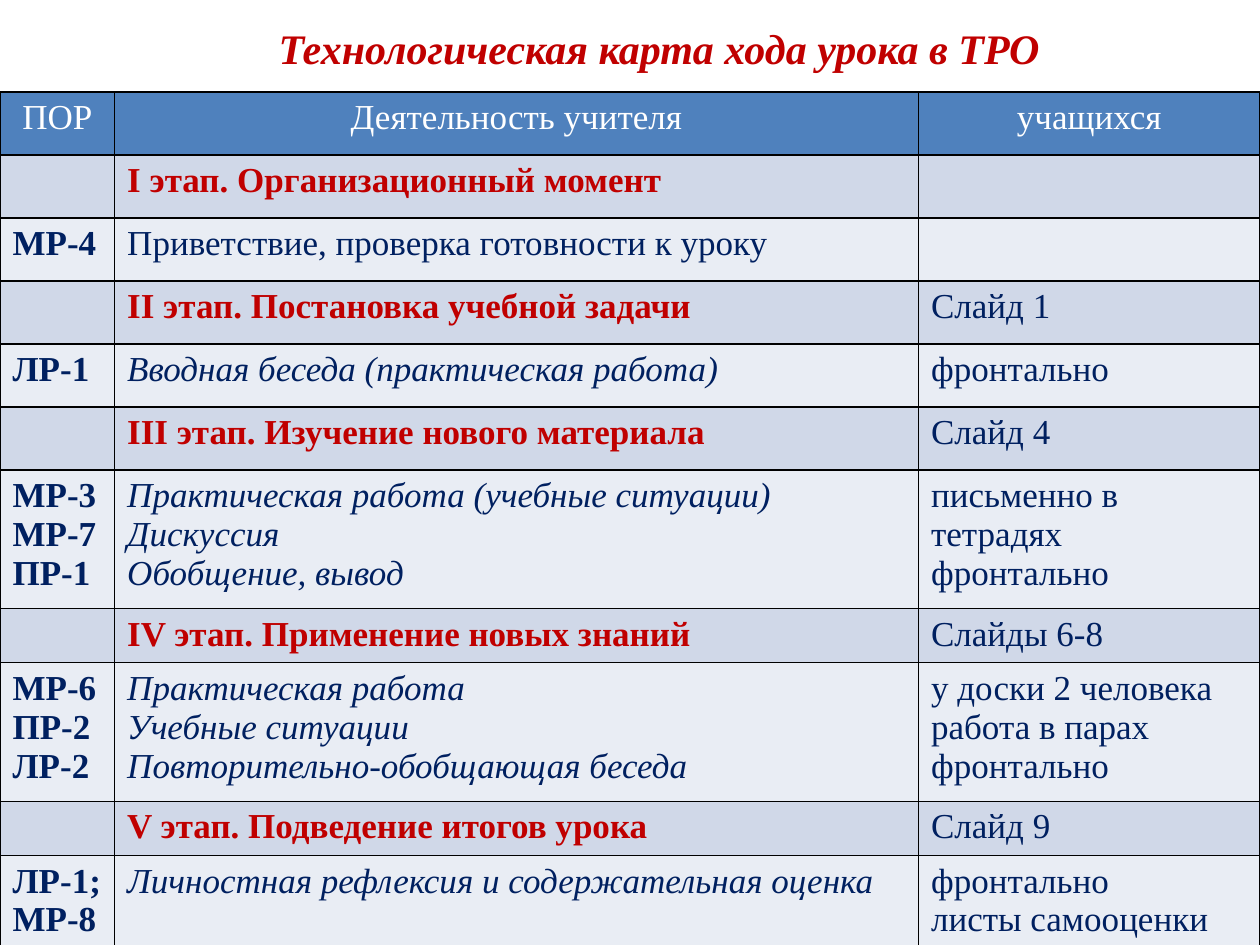
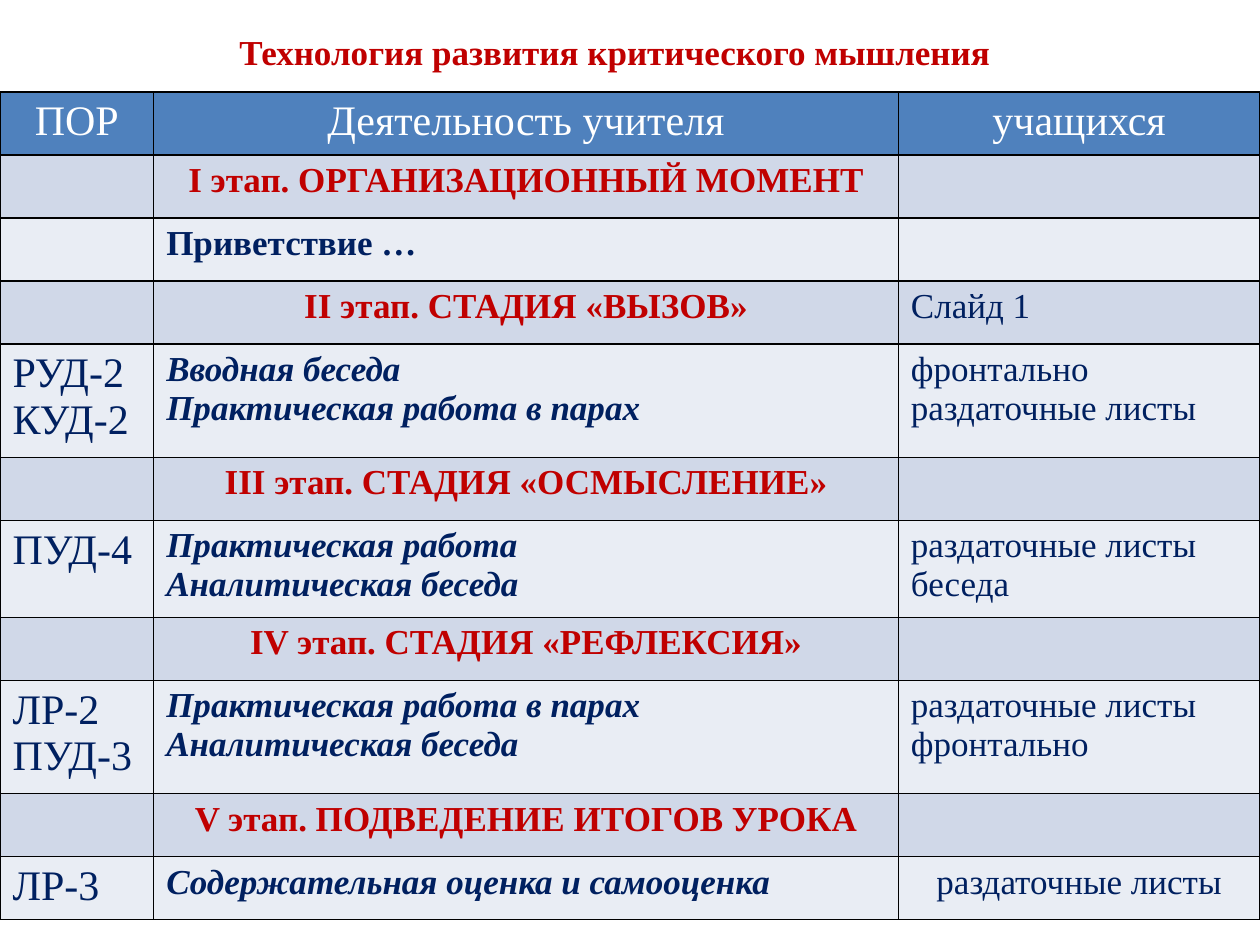
import pptx
import pptx.dml.color
import pptx.enum.text
import pptx.oxml
import pptx.oxml.ns
import pptx.util
from dataclasses import dataclass

Inches = pptx.util.Inches
Align = pptx.enum.text.PP_ALIGN


@dataclass(frozen=True)
class Theme:
    font: str = "Times New Roman"
    header: str = "4F81BD"
    stage: str = "D0D8E8"
    step: str = "E9EDF4"
    red: str = "C00000"
    navy: str = "002060"
    white: str = "FFFFFF"
    border: str = "000000"
    border_width: int = 12700
    regular: int = 20
    large: int = 24


theme = Theme()


def write_text(text_frame, text, size=theme.regular, color=theme.navy, bold=False, italic=False, align=Align.LEFT):
    for index, line in enumerate(text.split("\n")):
        paragraph = text_frame.paragraphs[0] if index == 0 else text_frame.add_paragraph()
        paragraph.alignment = align
        run = paragraph.add_run()
        run.text = line
        run.font.name = theme.font
        run.font.size = pptx.util.Pt(size)
        run.font.bold = bold
        run.font.italic = italic
        run.font.color.rgb = pptx.dml.color.RGBColor.from_string(color)


def paint_cell(cell, color):
    properties = cell._tc.get_or_add_tcPr()
    for side in ("lnL", "lnR", "lnT", "lnB"):
        properties.append(pptx.oxml.parse_xml(
            f'<a:{side} {pptx.oxml.ns.nsdecls("a")} w="{theme.border_width}"><a:solidFill>'
            f'<a:srgbClr val="{theme.border}"/></a:solidFill></a:{side}>'))
    cell.fill.solid()
    cell.fill.fore_color.rgb = pptx.dml.color.RGBColor.from_string(color)


header_row = ("ПОР", "Деятельность учителя", "учащихся")

lesson_plans = [
    {
        "title": "Технологическая карта хода урока в ТРО",
        "title_box": (1.53, 0.13, 7.4, 0.51),
        "title_format": {"size": theme.large, "italic": True},
        "columns": (0.91, 6.38, 2.71),
        "heights": (0.5, 0.5, 0.5, 0.5, 0.5, 0.5, 1.1, 0.43, 1.1, 0.43, 0.9),
        "header_size": theme.regular,
        "stage_align": Align.LEFT,
        "code_format": {"bold": True},
        "activity_bold": False,
        "last_align": Align.LEFT,
        "rows": [
            ("", "I этап. Организационный момент", ""),
            ("МР-4", "Приветствие, проверка готовности к уроку", ""),
            ("", "II этап. Постановка учебной задачи", "Слайд 1"),
            ("ЛР-1", "Вводная беседа (практическая работа)", "фронтально"),
            ("", "III этап. Изучение нового материала", "Слайд 4"),
            ("МР-3\nМР-7\nПР-1",
             "Практическая работа (учебные ситуации)\nДискуссия\nОбобщение, вывод",
             "письменно в тетрадях\nфронтально"),
            ("", "IV этап. Применение новых знаний", "Слайды 6-8"),
            ("МР-6\nПР-2\nЛР-2",
             "Практическая работа\nУчебные ситуации\nПовторительно-обобщающая беседа",
             "у доски 2 человека\nработа в парах\nфронтально"),
            ("", "V этап. Подведение итогов урока", "Слайд 9"),
            ("ЛР-1; МР-8", "Личностная рефлексия и содержательная оценка",
             "фронтально\nлисты самооценки"),
        ],
    },
    {
        "title": "Технология развития критического мышления",
        "title_box": (1.22, 0.19, 7.32, 0.44),
        "title_format": {"size": theme.regular},
        "columns": (1.22, 5.91, 2.87),
        "heights": (0.5, 0.5, 0.5, 0.5, 0.9, 0.5, 0.77, 0.5, 0.9, 0.5, 0.5),
        "header_size": theme.large,
        "stage_align": Align.CENTER,
        "code_format": {"size": theme.large},
        "activity_bold": True,
        "last_align": Align.CENTER,
        "rows": [
            ("", "I этап. ОРГАНИЗАЦИОННЫЙ МОМЕНТ", ""),
            ("", "Приветствие …", ""),
            ("", "II этап. СТАДИЯ «ВЫЗОВ»", "Слайд 1"),
            ("РУД-2\nКУД-2", "Вводная беседа\nПрактическая работа в парах",
             "фронтально\nраздаточные листы"),
            ("", "III этап. СТАДИЯ «ОСМЫСЛЕНИЕ»", ""),
            ("ПУД-4", "Практическая работа\nАналитическая беседа",
             "раздаточные листы\nбеседа"),
            ("", "IV этап. СТАДИЯ «РЕФЛЕКСИЯ»", ""),
            ("ЛР-2\nПУД-3", "Практическая работа в парах\nАналитическая беседа",
             "раздаточные листы\nфронтально"),
            ("", "V этап. ПОДВЕДЕНИЕ ИТОГОВ УРОКА", ""),
            ("ЛР-3", "Содержательная оценка и самооценка", "раздаточные листы"),
        ],
    },
]

presentation = pptx.Presentation()
presentation.slide_width = Inches(10)
presentation.slide_height = Inches(7.5)
title_only_layout = presentation.slide_layouts[5]

for plan in lesson_plans:
    slide = presentation.slides.add_slide(title_only_layout)
    title = slide.shapes.title
    title.left, title.top, title.width, title.height = map(Inches, plan["title_box"])
    title.text_frame.auto_size = pptx.enum.text.MSO_AUTO_SIZE.NONE
    title.text_frame.word_wrap = True
    title.text_frame.vertical_anchor = pptx.enum.text.MSO_ANCHOR.TOP
    write_text(title.text_frame, plan["title"], color=theme.red, bold=True,
               align=Align.CENTER, **plan["title_format"])

    rows = [header_row] + plan["rows"]
    table = slide.shapes.add_table(len(rows), len(header_row), Inches(0), Inches(0.73),
                                   Inches(10), Inches(sum(plan["heights"]))).table
    for column, width in zip(table.columns, plan["columns"]):
        column.width = Inches(width)

    for row_index, (row, height) in enumerate(zip(rows, plan["heights"])):
        table.rows[row_index].height = Inches(height)
        is_header = row_index == 0
        is_stage = row_index % 2 == 1
        fill = theme.header if is_header else theme.stage if is_stage else theme.step
        for column_index, text in enumerate(row):
            cell = table.cell(row_index, column_index)
            paint_cell(cell, fill)
            if not text:
                continue
            if is_header:
                text_format = {"size": plan["header_size"], "color": theme.white, "align": Align.CENTER}
            elif column_index == 0:
                text_format = plan["code_format"]
            elif column_index == 2:
                is_last = row_index == len(rows) - 1
                text_format = {"align": plan["last_align"] if is_last else Align.LEFT}
            elif is_stage:
                text_format = {"color": theme.red, "bold": True, "align": plan["stage_align"]}
            else:
                text_format = {"bold": plan["activity_bold"], "italic": row_index > 2}
            write_text(cell.text_frame, text, **text_format)

presentation.save("out.pptx")
